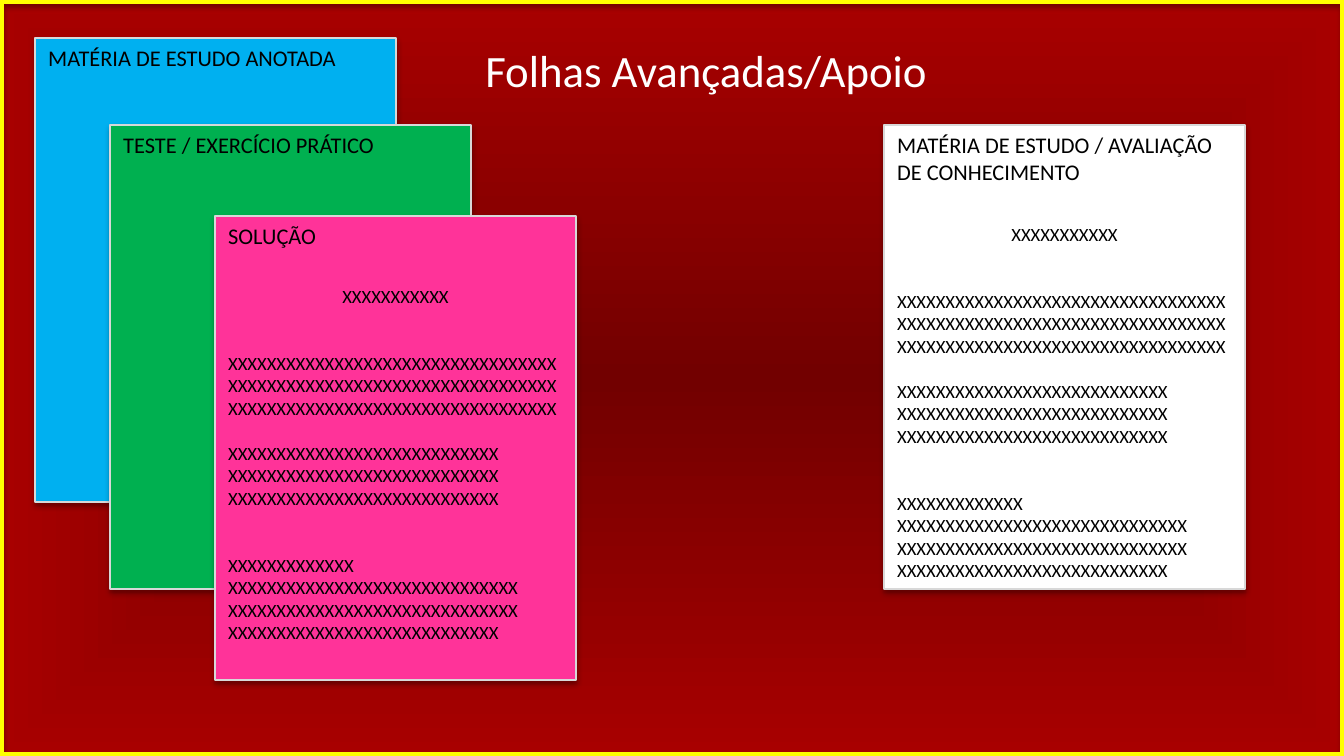
from dataclasses import dataclass

from pptx import Presentation
from pptx.dml.color import RGBColor
from pptx.enum.shapes import MSO_SHAPE
from pptx.enum.text import MSO_ANCHOR, MSO_AUTO_SIZE, PP_ALIGN
from pptx.oxml import parse_xml
from pptx.oxml.ns import nsdecls
from pptx.util import Emu, Pt

RECT = MSO_SHAPE.RECTANGLE
TOP = MSO_ANCHOR.TOP
NONE = MSO_AUTO_SIZE.NONE
LEFT, CENTER = PP_ALIGN.LEFT, PP_ALIGN.CENTER

SCALE = 914400 / 134.4
WIDE, HIGH = 1344, 756
PAGE_W, PAGE_H = 361, 464
BODY_H = 375


@dataclass(frozen=True)
class Theme:
    font: str = "Calibri"
    title: int = 24
    head: int = 12
    body: int = 10
    gap: int = 12
    white: str = "FFFFFF"
    black: str = "000000"
    frame: str = "FFFF00"
    edge: str = "D8D8D8"
    blue: str = "00B0F0"
    green: str = "00B050"
    pink: str = "FF3399"
    core: str = "720000"
    rim: str = "A80000"


THEME = Theme()
LINES = [
    (11, 0, CENTER),
    (102, 2, LEFT),
    (28, 1, LEFT),
    (28, 0, LEFT),
    (28, 0, LEFT),
    (13, 2, LEFT),
    (30, 0, LEFT),
    (30, 0, LEFT),
    (28, 0, LEFT),
]
PAGES = [
    (35, 38, THEME.blue, "MATÉRIA DE ESTUDO ANOTADA", 324, 41, None),
    (110, 125, THEME.green, "TESTE / EXERCÍCIO PRÁTICO", 324, 41, None),
    (215, 216, THEME.pink, "SOLUÇÃO", 133, 41, 62),
    (884, 125, THEME.white, "MATÉRIA DE ESTUDO / AVALIAÇÃO DE CONHECIMENTO",
     PAGE_W, 67, 91),
]


def px(num):
    return Emu(round(num * SCALE))


def color(code):
    return RGBColor.from_string(code)


def paint(slide):
    slide.background.fill.solid()
    props = slide._element.cSld.bg.bgPr
    props.replace(props[0], parse_xml(
        f'<a:gradFill {nsdecls("a")} rotWithShape="1"><a:gsLst>'
        f'<a:gs pos="0"><a:srgbClr val="{THEME.core}"/></a:gs>'
        f'<a:gs pos="100000"><a:srgbClr val="{THEME.rim}">'
        '<a:alpha val="88000"/></a:srgbClr></a:gs></a:gsLst>'
        '<a:path path="shape"><a:fillToRect l="50000" t="50000" '
        'r="50000" b="50000"/></a:path></a:gradFill>'))


def panel(slide, box, fill, line, width):
    shape = slide.shapes.add_shape(RECT, *map(px, box))
    if fill:
        shape.fill.solid()
        shape.fill.fore_color.rgb = color(fill)
    else:
        shape.fill.background()
    shape.line.color.rgb = color(line)
    shape.line.width = Pt(width)
    shape.shadow.inherit = False
    shape._element.spPr.find("{*}effectLst").append(parse_xml(
        f'<a:outerShdw {nsdecls("a")} blurRad="{Pt(3.1)}" dist="{Pt(1.8)}" '
        'dir="5400000" rotWithShape="0"><a:srgbClr val="000000">'
        '<a:alpha val="35000"/></a:srgbClr></a:outerShdw>'))


def write(para, text, size, ink, align=LEFT, before=0):
    para.alignment = align
    if before:
        para.space_before = Pt(before)
    run = para.add_run()
    run.text = text
    run.font.name = THEME.font
    run.font.size = Pt(size)
    run.font.color.rgb = color(ink)


def label(slide, box):
    frame = slide.shapes.add_textbox(*map(px, box)).text_frame
    frame.word_wrap = True
    return frame


def head(slide):
    shape = slide.shapes.title
    shape.left, shape.top, shape.width, shape.height = map(
        px, (469, 36, 474, 67))
    frame = shape.text_frame
    frame.word_wrap = True
    frame.auto_size = NONE
    frame.vertical_anchor = TOP
    write(frame.paragraphs[0], "Folhas Avançadas/Apoio", THEME.title,
          THEME.white, CENTER)


def body(slide, box):
    frame = label(slide, box)
    for spot, (count, skip, align) in enumerate(LINES):
        para = frame.add_paragraph() if spot else frame.paragraphs[0]
        write(para, "X" * count, THEME.body, THEME.black, align,
              skip * THEME.gap)


def page(slide, left, top, fill, text, width, height, drop):
    panel(slide, (left, top, PAGE_W, PAGE_H), fill, THEME.edge, 0.75)
    frame = label(slide, (left, top, width, height))
    write(frame.paragraphs[0], text, THEME.head, THEME.black)
    if drop:
        body(slide, (left, top + drop, PAGE_W, BODY_H))


def main():
    deck = Presentation()
    deck.slide_width, deck.slide_height = px(WIDE), px(HIGH)
    slide = deck.slides.add_slide(deck.slide_layouts[5])
    paint(slide)
    panel(slide, (0, 0, WIDE, HIGH), None, THEME.frame, 4.5)
    for item in PAGES:
        page(slide, *item)
    head(slide)
    deck.save("out.pptx")


if __name__ == "__main__":
    main()
